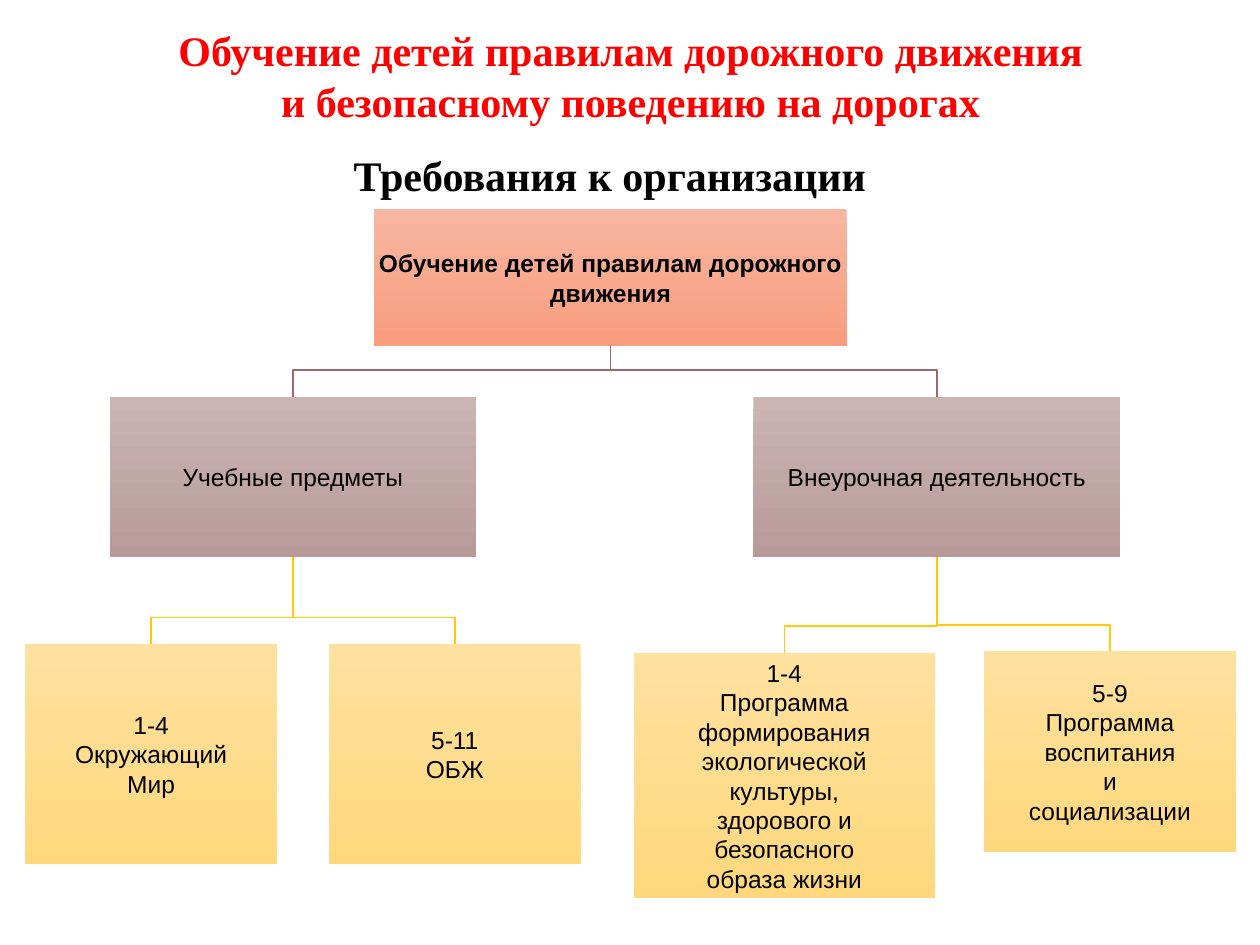
from pptx import Presentation
from pptx.dml.color import RGBColor
from pptx.enum.shapes import MSO_SHAPE
from pptx.enum.text import MSO_ANCHOR, PP_ALIGN
from pptx.util import Inches, Pt

theme = {
    "root": ("F7B6A0", "F89D7D"),
    "branch": ("CAB4B4", "B99A9A"),
    "leaf": ("FFE19F", "FFD87D"),
    "stem": "9C6A6A",
    "twig": "FFCA08",
    "red": "FF0000",
    "black": "000000",
    "head": ("Times New Roman", Pt(24)),
    "body": ("Arial", Pt(14)),
}

deck = Presentation()
deck.slide_width, deck.slide_height = Inches(10), Inches(7.5)
slide = deck.slides.add_slide(deck.slide_layouts[6])
shapes = slide.shapes
COL = deck.slide_width / 100
ROW = deck.slide_height / 75


def place(x, y, w, h):
    """Turn columns and rows into slide lengths."""
    return int(x * COL), int(y * ROW), int(w * COL), int(h * ROW)


def write(shape, text, face, color, bold):
    """Fill a shape with centred text, one paragraph a line."""
    frame = shape.text_frame
    frame.word_wrap = True
    frame.vertical_anchor = MSO_ANCHOR.MIDDLE
    frame.text = text
    for para in frame.paragraphs:
        para.alignment = PP_ALIGN.CENTER
        for run in para.runs:
            run.font.name, run.font.size = face
            run.font.bold = bold
            run.font.color.rgb = RGBColor.from_string(color)


# Headings
heads = [
    ((3.4, 11.7, 90, 4.9), "Требования к организации", "black", 0.9),
    ((2, 1.9, 96.1, 8.1),
     "Обучение детей правилам дорожного движения\n"
     "и безопасному поведению на дорогах", "red", 1.0),
]
for area, text, color, gap in heads:
    box = shapes.add_textbox(*place(*area))
    write(box, text, theme["head"], theme[color], True)
    for para in box.text_frame.paragraphs:
        para.line_spacing = gap

# Tree: name, parent, level, area, text
nodes = [
    ("root", None, "root", (29.7, 16.6, 37.5, 10.9),
     "Обучение детей правилам дорожного движения"),
    ("study", "root", "branch", (8.7, 31.5, 29.1, 12.7), "Учебные предметы"),
    ("extra", "root", "branch", (59.8, 31.5, 29.1, 12.7),
     "Внеурочная деятельность"),
    ("world", "study", "leaf", (2, 51.1, 20, 17.5),
     "1-4\nОкружающий\nМир"),
    ("safety", "study", "leaf", (26.1, 51.1, 20, 17.5), "5-11\nОБЖ"),
    ("health", "extra", "leaf", (50.3, 51.8, 23.9, 19.5),
     "1-4\nПрограмма\nформирования\nэкологической\nкультуры,\n"
     "здорового и\nбезопасного\nобраза жизни"),
    ("social", "extra", "leaf", (78.1, 51.7, 20, 15.9),
     "5-9\nПрограмма\nвоспитания\nи\nсоциализации"),
]
areas = {name: place(*area) for name, _, _, area, _ in nodes}

# Elbow links turn a fixed distance above the child
for name, parent, level, _, _ in nodes:
    if parent is None:
        continue
    px, py, pw, ph = areas[parent]
    x, y, w, _ = areas[name]
    start, end, turn = px + pw // 2, x + w // 2, y - int(2.1 * ROW)
    pen = shapes.build_freeform(start, py + ph)
    pen.add_line_segments([(start, turn), (end, turn), (end, y)], close=False)
    link = pen.convert_to_shape()
    link.shadow.inherit = False
    link.fill.background()
    tint = theme["stem" if level == "branch" else "twig"]
    link.line.color.rgb = RGBColor.from_string(tint)
    link.line.width = Pt(1)

for name, _, level, _, text in nodes:
    card = shapes.add_shape(MSO_SHAPE.RECTANGLE, *areas[name])
    card.shadow.inherit = False
    card.line.fill.background()
    card.fill.gradient()
    card.fill.gradient_angle = 270
    for stop, color in zip(card.fill.gradient_stops, theme[level]):
        stop.color.rgb = RGBColor.from_string(color)
    frame = card.text_frame
    frame.margin_left = frame.margin_right = Inches(0.01)
    frame.margin_top = frame.margin_bottom = Inches(0.01)
    write(card, text, theme["body"], theme["black"], level == "root")

deck.save("out.pptx")
